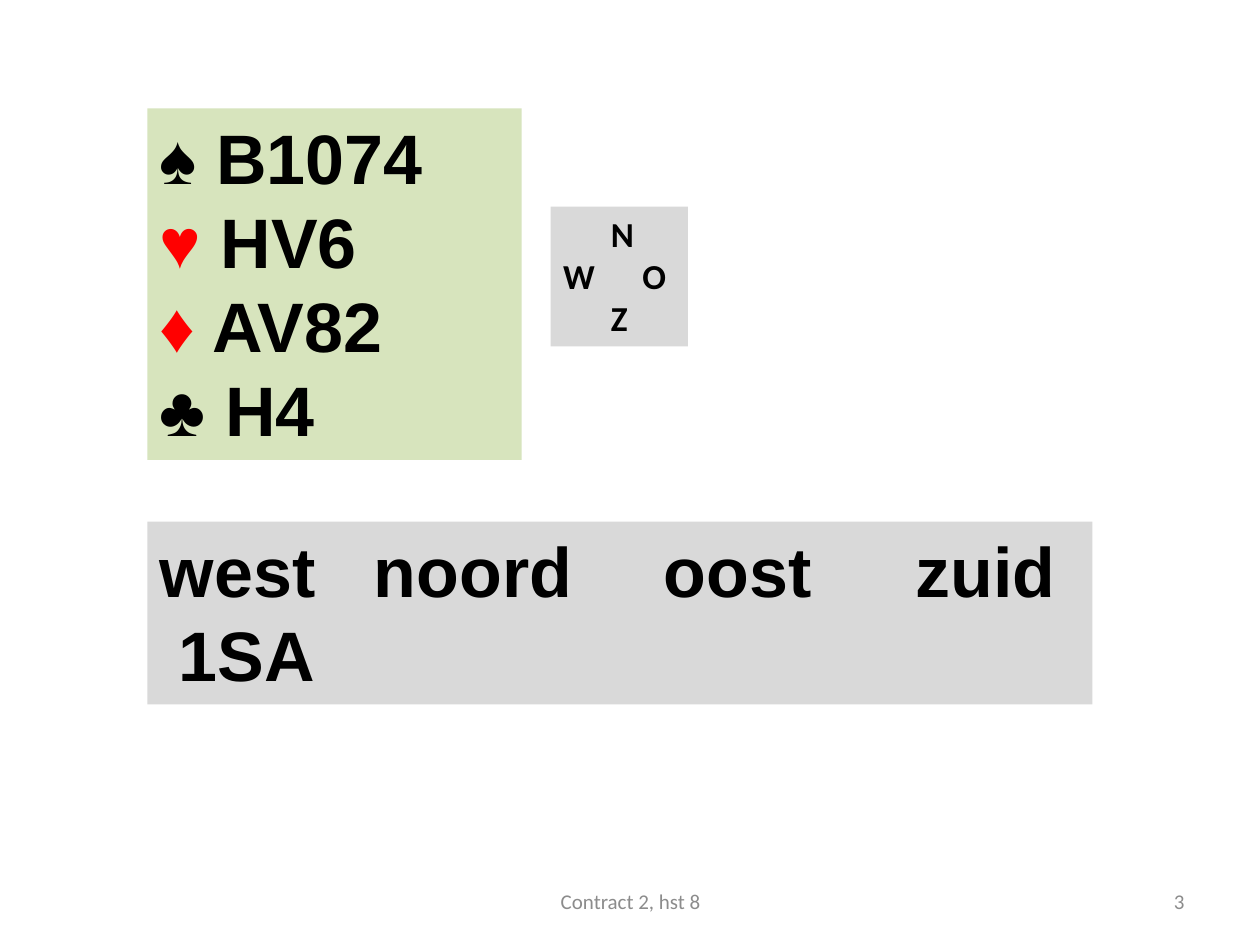
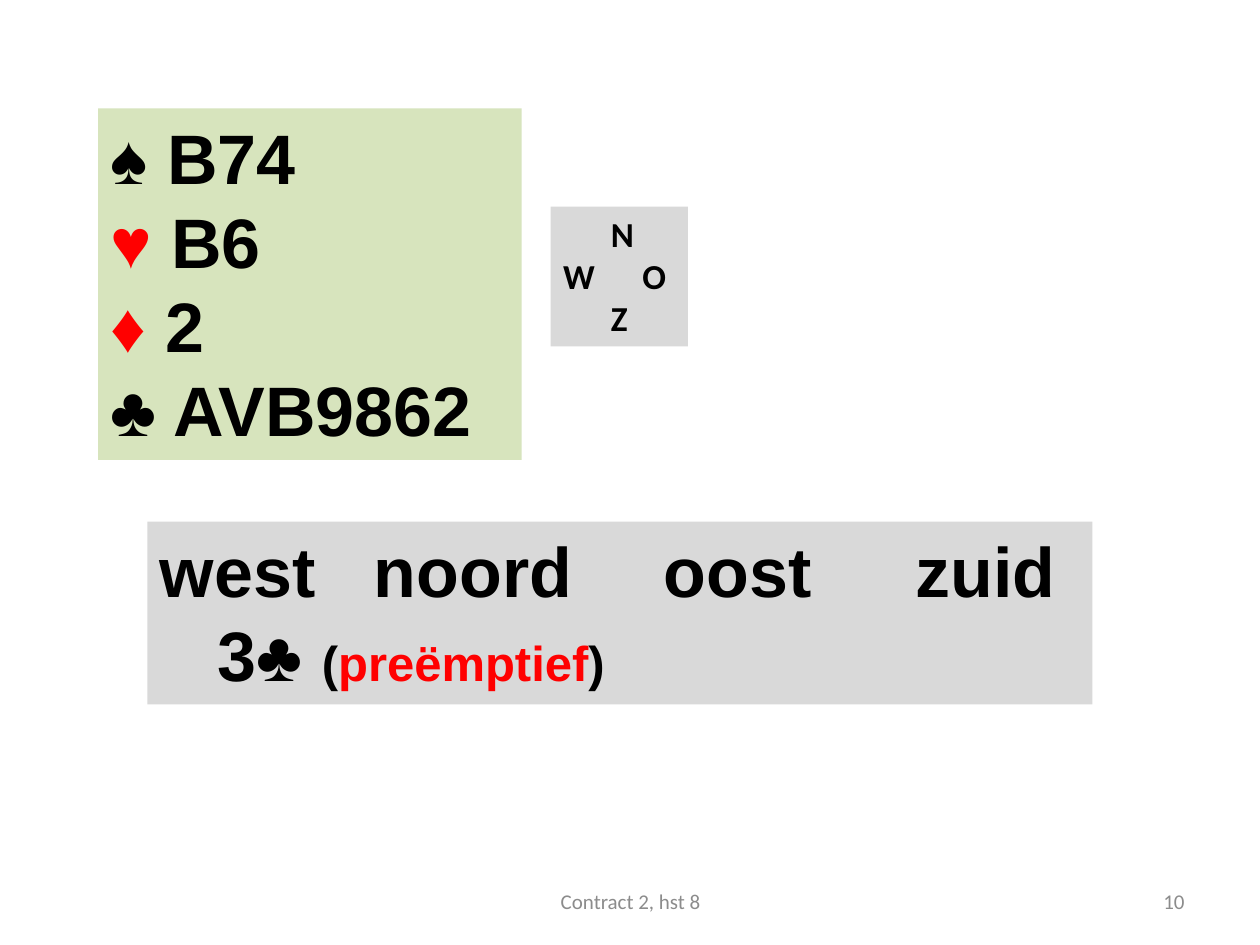
from lxml import etree
from pptx import Presentation
from pptx import util as u
from pptx.dml.color import RGBColor
from pptx.enum import shapes, text
from pptx.oxml.ns import qn

COLOURS = {
    "hand": "D7E4BD",
    "panel": "D9D9D9",
    "ink": "000000",
    "red": "FF0000",
    "footer": "8C8C8C",
}
SUITS = [("♠", "ink"), ("♥", "red"), ("♦", "red"), ("♣", "ink")]
FOOTER = "Contract 2, hst 8"
HAND_RIGHT = 4.14

# Each line is (indent in inches, spans); each span is (text, colour, size or None).
COMPASS = [
    (0.38, [("N", "ink", None)]),
    (0, [("W\tO", "ink", None)]),
    (0.38, [("Z", "ink", None)]),
]
COMPASS_TABS = [0.63]
SEATS = (0, [("west\tnoord\toost\tzuid", "ink", None)])
SEAT_TABS = [1.7, 4, 6]

DEALS = [
    {
        "number": 3,
        "hand_left": 1.17,
        "cards": ["B1074", "HV6", "AV82", "H4"],
        "bid": (0.15, [("1SA", "ink", None)]),
    },
    {
        "number": 10,
        "hand_left": 0.78,
        "cards": ["B74", "B6", "2", "AVB9862"],
        "bid": (0.46, [("3♣ ", "ink", None), ("(", "ink", 28),
                       ("preëmptief", "red", 28), (")", "ink", 28)]),
    },
]


def colour(name):
    return RGBColor.from_string(COLOURS[name])


def set_tabs(para, stops):
    tab_list = etree.SubElement(para._p.get_or_add_pPr(), qn("a:tabLst"))
    for stop in stops:
        etree.SubElement(tab_list, qn("a:tab"), pos=str(u.Inches(stop)), algn="l")


def add_text(page, lines, place, *, size, font, bold=True, fill=None, tabs=(),
             align=text.PP_ALIGN.LEFT, anchor=text.MSO_ANCHOR.TOP):
    """Write lines in a box, which is a filled rectangle when fill is given."""
    area = [u.Inches(length) for length in place]
    if fill:
        box = page.shapes.add_shape(shapes.MSO_SHAPE.RECTANGLE, *area)
        box.shadow.inherit = False
        box.fill.solid()
        box.fill.fore_color.rgb = colour(fill)
        box.line.fill.background()
    else:
        box = page.shapes.add_textbox(*area)
    frame = box.text_frame
    frame.word_wrap = True
    frame.vertical_anchor = anchor
    if fill:
        frame.auto_size = text.MSO_AUTO_SIZE.SHAPE_TO_FIT_TEXT
    for index, (indent, spans) in enumerate(lines):
        para = frame.add_paragraph() if index else frame.paragraphs[0]
        para.alignment = align
        if indent:
            para._p.get_or_add_pPr().set("marL", str(u.Inches(indent)))
        if tabs:
            set_tabs(para, tabs)
        for words, ink, own_size in spans:
            span = para.add_run()
            span.text = words
            span.font.name = font
            span.font.size = u.Pt(own_size or size)
            span.font.bold = bold
            span.font.color.rgb = colour(ink)


def add_footer(page, words, place, align):
    add_text(page, [(0, [(words, "footer", None)])], place, size=12, font="Calibri",
             bold=False, align=align, anchor=text.MSO_ANCHOR.MIDDLE)


def add_deal(deck, deal):
    page = deck.slides.add_slide(deck.slide_layouts[6])
    hand = [(0, [(suit, ink, None), (f" {cards}", "ink", None)])
            for (suit, ink), cards in zip(SUITS, deal["cards"])]
    left = deal["hand_left"]
    add_text(page, hand, (left, 0.86, HAND_RIGHT - left, 2.79),
             size=40, font="Arial", fill="hand")
    add_text(page, COMPASS, (4.37, 1.64, 1.09, 1.11),
             size=20, font="Calibri", fill="panel", tabs=COMPASS_TABS)
    add_text(page, [SEATS, deal["bid"]], (1.17, 4.14, 7.5, 1.45),
             size=40, font="Arial", fill="panel", tabs=SEAT_TABS)
    add_footer(page, str(deal["number"]), (7.17, 6.95, 2.33, 0.4), text.PP_ALIGN.RIGHT)
    add_footer(page, FOOTER, (3.42, 6.95, 3.17, 0.4), text.PP_ALIGN.CENTER)


def main():
    deck = Presentation()
    deck.slide_width, deck.slide_height = u.Inches(10), u.Inches(7.5)
    for deal in DEALS:
        add_deal(deck, deal)
    deck.save("out.pptx")


if __name__ == "__main__":
    main()
